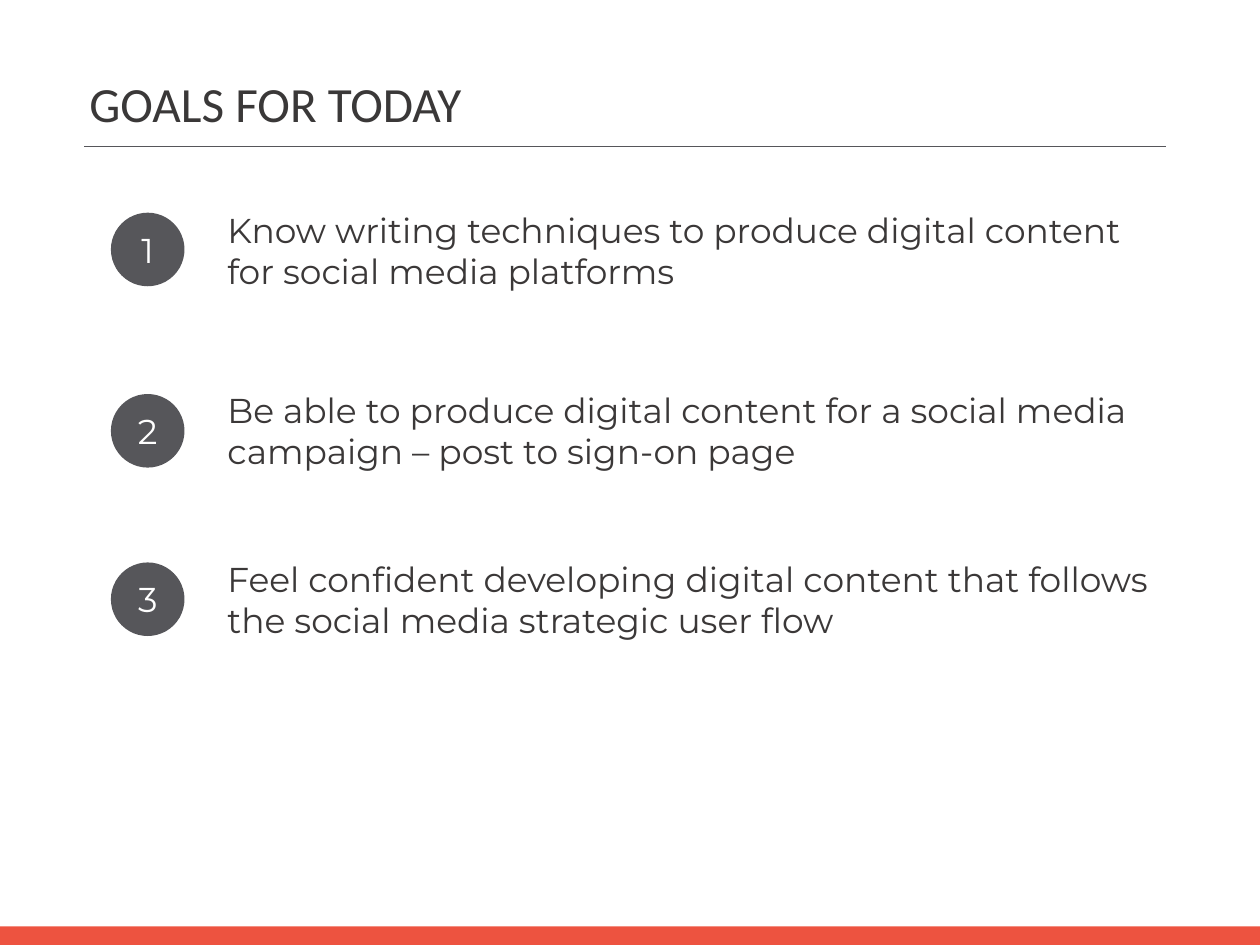
from dataclasses import dataclass

from lxml import etree
from pptx import Presentation
from pptx.dml.color import RGBColor
from pptx.enum.shapes import MSO_CONNECTOR, MSO_SHAPE
from pptx.enum.text import MSO_ANCHOR, MSO_AUTO_SIZE, PP_ALIGN
from pptx.oxml.ns import qn
from pptx.util import Cm, Pt

RECT, OVAL = MSO_SHAPE.RECTANGLE, MSO_SHAPE.OVAL
STRAIGHT = MSO_CONNECTOR.STRAIGHT
TOP, MIDDLE = MSO_ANCHOR.TOP, MSO_ANCHOR.MIDDLE
LEFT, CENTER = PP_ALIGN.LEFT, PP_ALIGN.CENTER
NO_FIT = MSO_AUTO_SIZE.NONE

WIDTH, HEIGHT = 36.12, 27.1
BAR_TOP = 26.57
TITLE_ONLY = 5
BADGE_SIZE = 2.11

GOALS = [
    (6.1, 5.87, 27.28, "Know writing techniques to produce digital content for social media platforms"),
    (11.3, 11.02, 28.09, "Be able to produce digital content for a social media campaign – post to sign-on page"),
    (16.13, 15.88, 27.28, "Feel confident developing digital content that follows the social media strategic user flow"),
]


@dataclass(frozen=True)
class Theme:
    title_font: str = "Calibri"
    body_font: str = "Montserrat"
    title_size: int = 40
    body_size: int = 28
    accent: str = "ED5340"
    grey: str = "56565A"
    title: str = "3A3838"
    body: str = "3B3838"
    white: str = "FFFFFF"


class Deck:
    def __init__(self, slide, theme):
        self.slide = slide
        self.theme = theme

    def set_text(self, s, text, font, size, color, align=LEFT, anchor=TOP):
        tf = s.text_frame
        tf.text = text
        tf.word_wrap = True
        tf.auto_size = NO_FIT
        tf.vertical_anchor = anchor
        p = tf.paragraphs[0]
        p.alignment = align
        p.line_spacing = 1.0
        p.space_before = Pt(0)
        r = p.runs[0]
        r.font.name = font
        r.font.size = Pt(size)
        r.font.color.rgb = RGBColor.from_string(color)

    def title(self, text, x, y, w, h):
        s = self.slide.shapes.title
        s.left, s.top, s.width, s.height = Cm(x), Cm(y), Cm(w), Cm(h)
        t = self.theme
        self.set_text(s, text, t.title_font, t.title_size, t.title)

    def shape(self, kind, x, y, w, h, color):
        s = self.slide.shapes.add_shape(kind, Cm(x), Cm(y), Cm(w), Cm(h))
        s.shadow.inherit = False
        s.fill.solid()
        s.fill.fore_color.rgb = RGBColor.from_string(color)
        s.line.fill.background()
        return s

    def badge(self, number, x, y):
        t = self.theme
        s = self.shape(OVAL, x, y, BADGE_SIZE, BADGE_SIZE, t.grey)
        self.set_text(s, str(number), t.body_font, t.body_size, t.white, CENTER, MIDDLE)

    def text(self, text, x, y, w, h):
        s = self.slide.shapes.add_textbox(Cm(x), Cm(y), Cm(w), Cm(h))
        t = self.theme
        self.set_text(s, text, t.body_font, t.body_size, t.body)

    def rule(self, x1, x2, y):
        s = self.slide.shapes.add_connector(STRAIGHT, Cm(x1), Cm(y), Cm(x2), Cm(y))
        s.line.color.rgb = RGBColor.from_string(self.theme.grey)
        s.line.width = Pt(1)
        etree.SubElement(s._element.spPr, qn("a:effectLst"))


def main():
    prs = Presentation()
    prs.slide_width, prs.slide_height = Cm(WIDTH), Cm(HEIGHT)
    theme = Theme()
    deck = Deck(prs.slides.add_slide(prs.slide_layouts[TITLE_ONLY]), theme)

    deck.shape(RECT, 0, BAR_TOP, WIDTH, HEIGHT - BAR_TOP, theme.accent)
    deck.title("GOALS FOR TODAY", 2.31, 1.98, 11.61, 2.01)
    deck.rule(2.41, 33.43, 4.19)
    for number, (badge_y, text_y, width, goal) in enumerate(GOALS, 1):
        deck.badge(number, 3.18, badge_y)
        deck.text(goal, 6.27, text_y, width, 2.64)

    prs.save("out.pptx")


if __name__ == "__main__":
    main()
